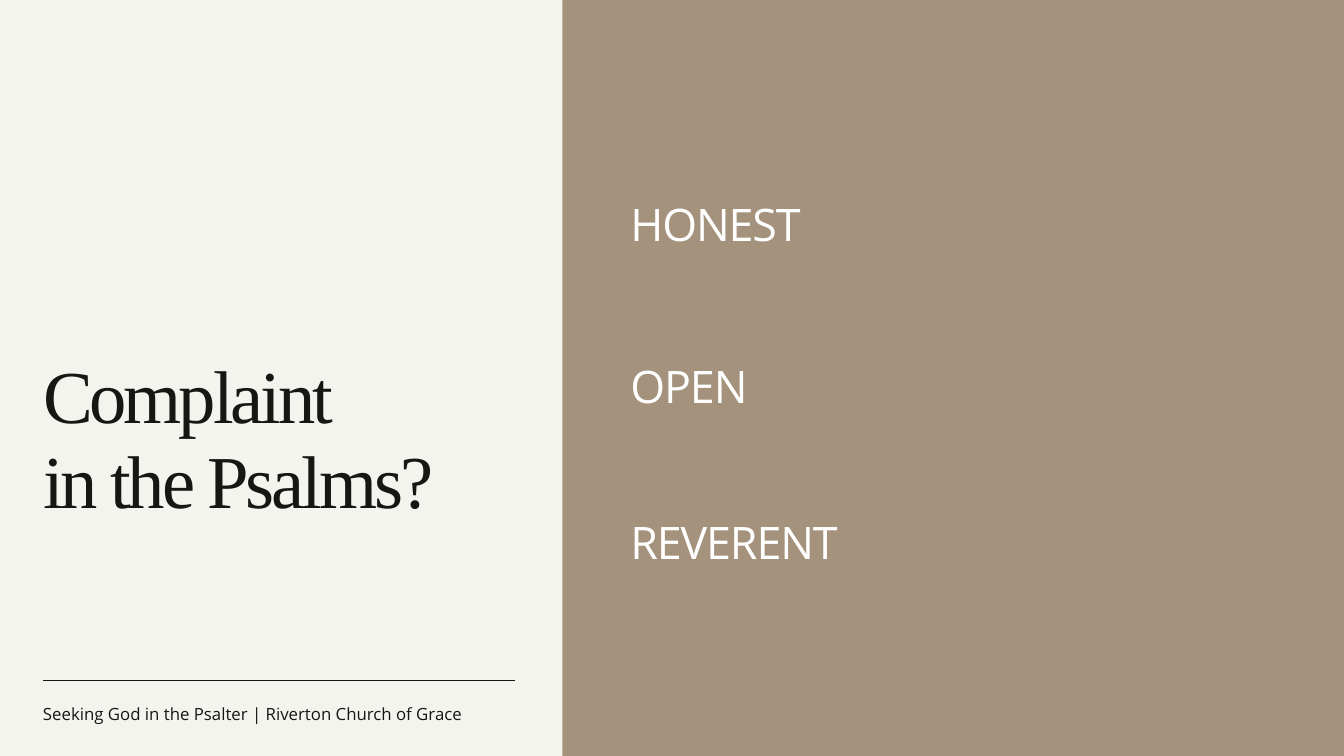
"""Build a two-panel slide on complaint in the Psalms."""
from pptx import Presentation
from pptx.dml.color import RGBColor
from pptx.enum.shapes import MSO_CONNECTOR, MSO_SHAPE
from pptx.enum.text import MSO_ANCHOR, MSO_AUTO_SIZE, PP_ALIGN
from pptx.oxml.ns import qn
from pptx.util import Inches, Pt
from lxml.etree import SubElement

CREAM = RGBColor(0xF3, 0xF4, 0xED)
TAUPE = RGBColor(0xA4, 0x92, 0x7C)
INK = RGBColor(0x15, 0x17, 0x15)
WHITE = RGBColor(0xFF, 0xFF, 0xFF)


def place(shape, left, top, width, height):
    shape.left, shape.top = Inches(left), Inches(top)
    shape.width, shape.height = Inches(width), Inches(height)


def write(shape, lines, font_name, size, color, line_height, tracking=0, gaps=(0, 0, 0)):
    frame = shape.text_frame
    frame.margin_left = frame.margin_right = frame.margin_top = frame.margin_bottom = 0
    frame.word_wrap = True
    frame.auto_size = MSO_AUTO_SIZE.NONE
    frame.vertical_anchor = MSO_ANCHOR.TOP
    frame.text = "\n".join(lines)
    for paragraph, gap in zip(frame.paragraphs, gaps):
        paragraph.alignment = PP_ALIGN.LEFT
        paragraph.line_spacing = Pt(line_height)
        paragraph.space_before = Pt(gap)
        paragraph.space_after = Pt(0)
        font = paragraph.font
        font.name, font.size = font_name, Pt(size)
        font.color.rgb = color
        properties = paragraph._p.get_or_add_pPr()
        properties.set("marL", "0")
        properties.set("indent", "0")
        properties.find(qn("a:defRPr")).set("spc", str(round(tracking * 100)))
        properties.find(qn("a:defRPr")).addprevious(SubElement(properties, qn("a:buNone")))


presentation = Presentation()
presentation.slide_width = Inches(20)
presentation.slide_height = Inches(11.25)
slide = presentation.slides.add_slide(presentation.slide_layouts[1])
slide.background.fill.solid()
slide.background.fill.fore_color.rgb = CREAM

MARGIN = 0.64
COLUMN = 7.03
PANEL_LEFT = 8.37
RULE_TOP = 10.12

panel = slide.shapes.add_shape(MSO_SHAPE.RECTANGLE, 0, 0, 0, 0)
place(panel, PANEL_LEFT, 0, 20 - PANEL_LEFT, 11.25)
panel.shadow.inherit = False
panel.fill.solid()
panel.fill.fore_color.rgb = TAUPE
panel.line.fill.background()
slide.shapes._spTree.insert(2, panel._element)

title = slide.shapes.title
place(title, MARGIN, 5.26, COLUMN, 3.81)
write(title, ["Complaint", "in the Psalms?"], "Times New Roman", 80, INK, 91.2, -3.4)

qualities = slide.placeholders[1]
place(qualities, 9.38, 3, 8.56, 5.48)
write(qualities, ["HONEST", "OPEN", "REVERENT"], "Open Sans", 48, WHITE, 52.8, -1.2, (0, 120.7, 114.2))

rule = slide.shapes.add_connector(
    MSO_CONNECTOR.STRAIGHT, Inches(MARGIN), Inches(RULE_TOP), Inches(MARGIN + COLUMN), Inches(RULE_TOP)
)
rule.line.color.rgb = INK
rule.line.width = Pt(0.75)
SubElement(rule._element.spPr, qn("a:effectLst"))

footer = slide.shapes.add_textbox(0, 0, 0, 0)
place(footer, MARGIN, 10.5, COLUMN, 0.27)
write(footer, ["Seeking God in the Psalter | Riverton Church of Grace"], "Open Sans", 18, INK, 19.8)

presentation.save("out.pptx")
